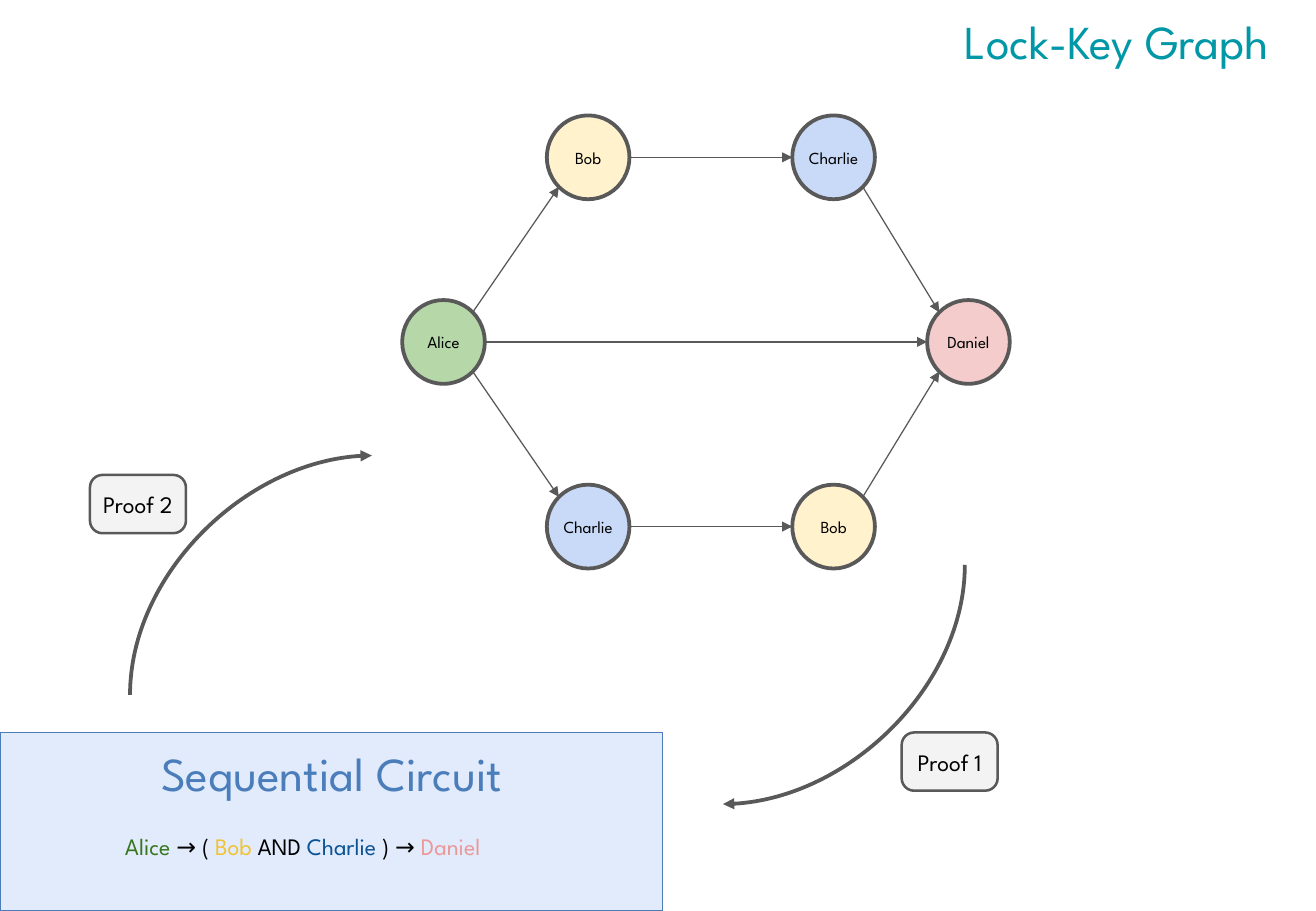
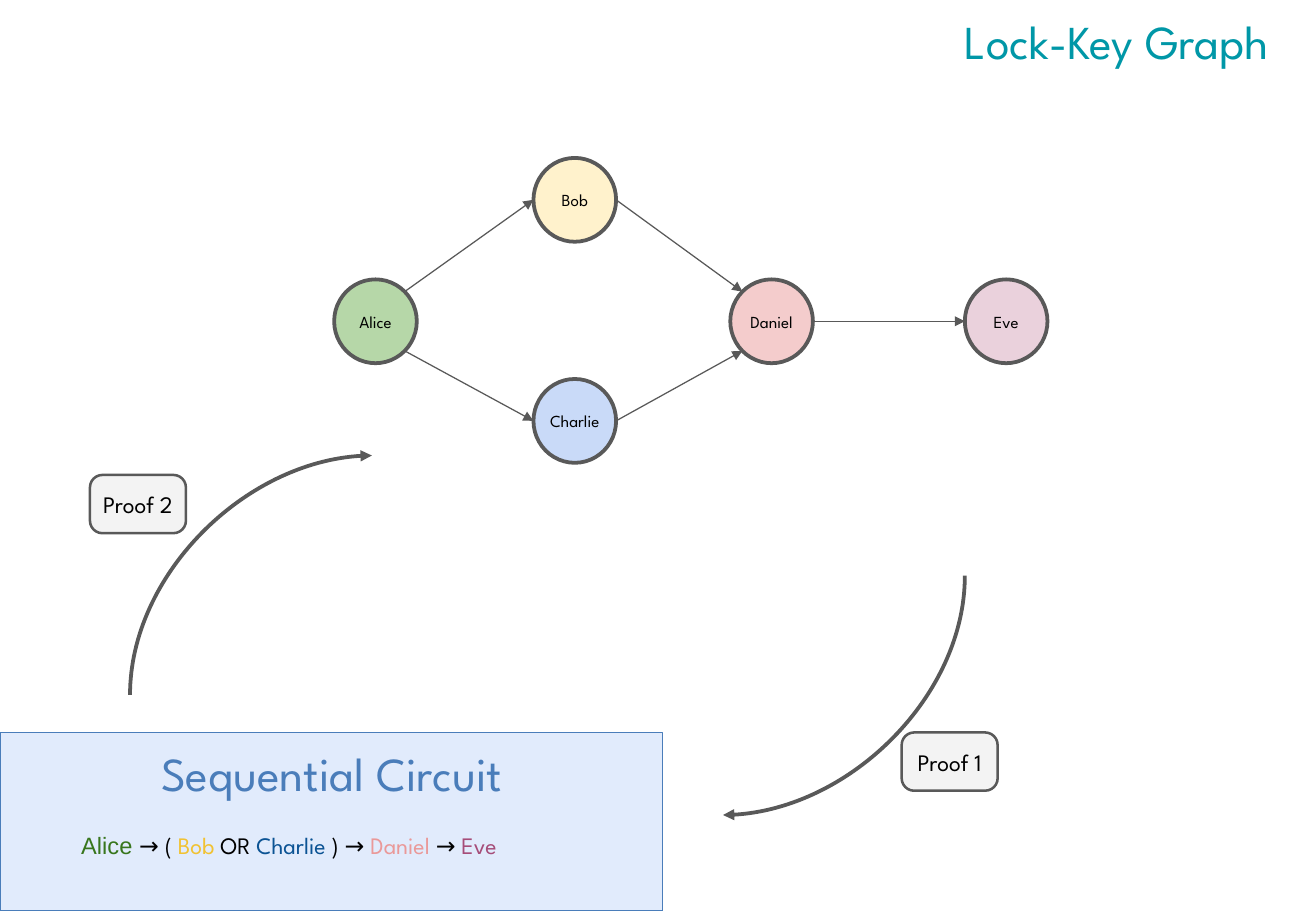
import math
from lxml import etree
from pptx import Presentation
from pptx import util as u
from pptx.dml.color import RGBColor
from pptx.enum import shapes, text
from pptx.oxml.ns import qn

FONT = "League Spartan"
INK, BLACK, TEAL, BLUE, PANEL, TAG = "595959", "000000", "0097A7", "4A7DBA", "E1EBFC", "F3F3F3"
# Person: (node fill, colour in the formula)
PEOPLE = {
    "Alice": ("B6D7A8", "38761D"),
    "Bob": ("FFF2CC", "F1C232"),
    "Charlie": ("C9DAF8", "0B5394"),
    "Daniel": ("F4CCCC", "EA9999"),
    "Eve": ("EAD1DC", "A64D79"),
}
NODE_W, NODE_H = 0.68, 0.69
# Connection sites of an ellipse, counted anticlockwise from the top
SITES = ["n", "nw", "w", "sw", "s", "se", "e", "ne"]


def color(value):
    return RGBColor.from_string(value)


class Sketch:
    """Holds the deck, its style and the slide being drawn."""

    def __init__(self):
        self.deck = Presentation()
        self.deck.slide_width, self.deck.slide_height = u.Inches(10.83), u.Inches(7.5)
        self.page = None

    def new_page(self, title):
        self.page = self.deck.slides.add_slide(self.deck.slide_layouts[5])
        box = self.page.shapes.title
        box.left, box.top, box.width, box.height = map(u.Inches, (7.54, 0, 3.3, 0.77))
        self.set_text(box, [(title, TEAL)], 28)

    def set_text(self, box, spans, size, centred=True, inset=0.1, anchor=text.MSO_ANCHOR.TOP):
        """Fill a box with one paragraph of (wording, colour) spans."""
        frame = box.text_frame
        frame.word_wrap = True
        frame.auto_size = text.MSO_AUTO_SIZE.NONE
        frame.vertical_anchor = anchor
        frame.margin_left = frame.margin_right = u.Inches(inset)
        frame.margin_top = frame.margin_bottom = u.Inches(inset)
        para = frame.paragraphs[0]
        para.alignment = text.PP_ALIGN.CENTER if centred else text.PP_ALIGN.LEFT
        for wording, ink in spans:
            span = para.add_run()
            span.text = wording
            span.font.name, span.font.size = FONT, u.Pt(size)
            span.font.color.rgb = color(ink)
        return para

    def label(self, at, spans, size, centred=True):
        box = self.page.shapes.add_textbox(*map(u.Inches, at))
        return self.set_text(box, spans, size, centred)

    def shape(self, kind, at, fill, line, weight, wording="", size=10):
        shape = self.page.shapes.add_shape(kind, *map(u.Inches, at))
        shape.shadow.inherit = False
        shape.fill.solid()
        shape.fill.fore_color.rgb = color(fill)
        shape.line.color.rgb = color(line)
        shape.line.width = u.Pt(weight)
        if wording:
            self.set_text(shape, [(wording, BLACK)], size, inset=0, anchor=text.MSO_ANCHOR.MIDDLE)
        return shape

    def node(self, name, left, top):
        return self.shape(shapes.MSO_SHAPE.OVAL, (left, top, NODE_W, NODE_H),
                          PEOPLE[name][0], INK, 2.25, name)

    def tag(self, wording, left, top):
        tag = self.shape(shapes.MSO_SHAPE.ROUNDED_RECTANGLE, (left, top, 0.79, 0.48),
                         TAG, INK, 1.5, wording, 14)
        tag.adjustments[0] = 0.215

    def arrow(self, kind, ends, weight):
        arrow = self.page.shapes.add_connector(kind, *ends)
        arrow.line.color.rgb = color(INK)
        arrow.line.width = u.Pt(weight)
        properties = arrow.element.spPr
        etree.SubElement(properties.find(qn("a:ln")), qn("a:tailEnd"), type="triangle")
        etree.SubElement(properties, qn("a:effectLst"))
        return arrow

    def edge(self, start, start_site, end, end_site):
        """Join two nodes at named ellipse sites."""
        joints = [(start, SITES.index(start_site)), (end, SITES.index(end_site))]
        ends = []
        for node, index in joints:
            angle = math.radians(90 + 45 * index)
            ends += [int(node.left + node.width * (1 + math.cos(angle)) / 2),
                     int(node.top + node.height * (1 - math.sin(angle)) / 2)]
        arrow = self.arrow(shapes.MSO_CONNECTOR.STRAIGHT, ends, 0.75)
        links = arrow.element.find(".//" + qn("p:cNvCxnSpPr"))
        for mark, (node, index) in zip(("a:stCxn", "a:endCxn"), joints):
            etree.SubElement(links, qn(mark), id=str(node.shape_id), idx=str(index))

    def quarter_curve(self, left, top, degrees):
        """Draw a quarter-turn arrow, rotated clockwise about its centre."""
        ends = map(u.Inches, (left, top, left + 1.97, top + 1.99))
        arrow = self.arrow(shapes.MSO_CONNECTOR.CURVE, ends, 2.25)
        properties = arrow.element.spPr
        properties.find(qn("a:xfrm")).set("rot", str(degrees * 60000))
        properties.find(qn("a:prstGeom")).set("prst", "curvedConnector2")

    def graph(self, nodes, edges):
        drawn = {key: self.node(key.split()[0], *corner) for key, corner in nodes.items()}
        for start, start_site, end, end_site in edges:
            self.edge(drawn[start], start_site, drawn[end], end_site)

    def circuit(self, formula_at, formula):
        """Draw the panel with its formula, a list of words coloured by person."""
        self.shape(shapes.MSO_SHAPE.RECTANGLE, (0, 6.03, 5.45, 1.47), PANEL, BLUE, 0.75)
        self.label((1.08, 6.03, 3.3, 0.6), [("Sequential Circuit", BLUE)], 28)
        spans = [(word, PEOPLE.get(word.strip(), ("", BLACK))[1]) for word in formula]
        return self.label(formula_at, spans, 14, centred=False)

    def proofs(self, right_curve_top):
        self.quarter_curve(5.96, right_curve_top, 90)
        self.quarter_curve(1.08, 3.74, 270)
        self.tag("Proof 1", 7.42, 6.03)
        self.tag("Proof 2", 0.74, 3.91)


def and_page(sketch):
    sketch.new_page("Lock-Key Graph")
    left, right, upper, middle, lower = 4.5, 6.52, 0.95, 2.47, 3.99
    sketch.graph(
        {"Alice": (3.31, middle), "Daniel": (7.63, middle),
         "Bob upper": (left, upper), "Charlie upper": (right, upper),
         "Charlie lower": (left, lower), "Bob lower": (right, lower)},
        [("Alice", "ne", "Bob upper", "sw"),
         ("Bob upper", "e", "Charlie upper", "w"),
         ("Charlie upper", "se", "Daniel", "nw"),
         ("Alice", "e", "Daniel", "w"),
         ("Alice", "se", "Charlie lower", "nw"),
         ("Charlie lower", "e", "Bob lower", "w"),
         ("Bob lower", "ne", "Daniel", "sw")])
    sketch.circuit((0.93, 6.75, 3.78, 0.38),
                   ["Alice ", "→ ( ", "Bob ", "AND ", "Charlie ", ") → ", "Daniel"])
    sketch.proofs(4.64)


def or_page(sketch):
    sketch.new_page("Lock-Key Graph")
    middle = 2.3
    sketch.graph(
        {"Alice": (2.75, middle), "Bob": (4.39, 1.3), "Charlie": (4.39, 3.12),
         "Daniel": (6.01, middle), "Eve": (7.94, middle)},
        [("Alice", "ne", "Bob", "w"),
         ("Alice", "se", "Charlie", "w"),
         ("Bob", "e", "Daniel", "nw"),
         ("Charlie", "e", "Daniel", "sw"),
         ("Daniel", "e", "Eve", "w")])
    formula = sketch.circuit(
        (0.57, 6.74, 4.13, 0.38),
        ["Alice ", "→ ( ", "Bob ", "OR ", "Charlie ", ") → ", "Daniel ", "→ ", "Eve"])
    formula.runs[0].font.name = "Arial"
    sketch.proofs(4.73)


def main():
    sketch = Sketch()
    and_page(sketch)
    or_page(sketch)
    sketch.deck.save("out.pptx")


if __name__ == "__main__":
    main()
